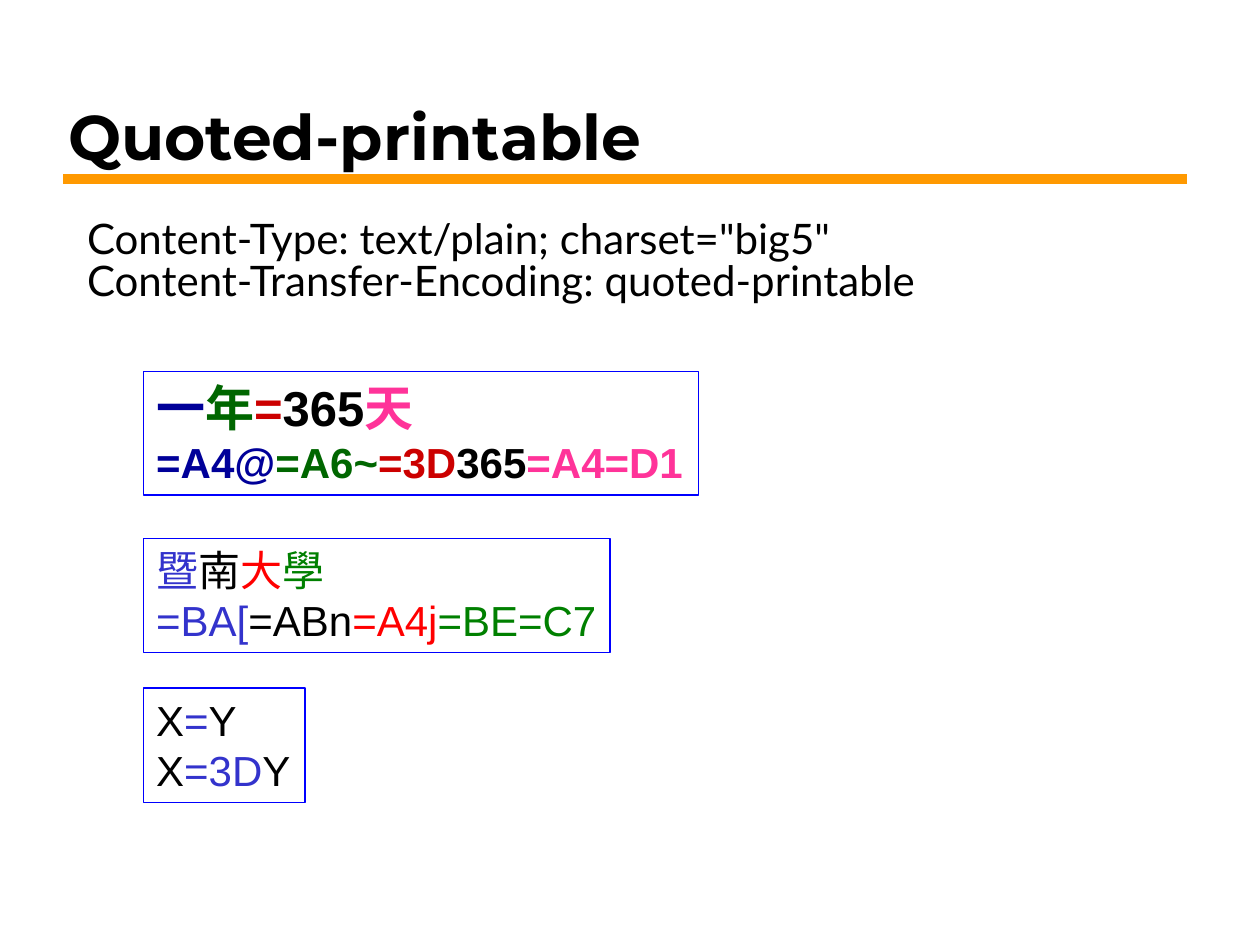
from dataclasses import dataclass

import pptx
import pptx.dml.color
import pptx.enum.shapes
import pptx.enum.text
import pptx.util
from lxml import etree
from pptx.oxml.ns import qn

Cm, Pt = pptx.util.Cm, pptx.util.Pt
RGBColor = pptx.dml.color.RGBColor
PP_ALIGN = pptx.enum.text.PP_ALIGN
MSO_ANCHOR = pptx.enum.text.MSO_ANCHOR
MSO_AUTO_SIZE = pptx.enum.text.MSO_AUTO_SIZE

BLACK = RGBColor(0x00, 0x00, 0x00)
ORANGE = RGBColor(0xFF, 0x99, 0x00)
BORDER_BLUE = RGBColor(0x00, 0x00, 0xFF)
INDIGO = RGBColor(0x33, 0x33, 0xCC)
RED = RGBColor(0xFF, 0x00, 0x00)
GREEN = RGBColor(0x00, 0x80, 0x00)
NAVY = RGBColor(0x00, 0x00, 0x99)
DARK_GREEN = RGBColor(0x00, 0x66, 0x00)
DARK_RED = RGBColor(0xCC, 0x00, 0x00)
PINK = RGBColor(0xFF, 0x33, 0x99)

BOX_LEFT = Cm(2.9)


@dataclass
class Example:
    """Plain text over its encoding; both split into equally coloured parts."""
    top: float
    width: float
    height: float
    colors: list[RGBColor]
    plain: list[str]
    encoded: list[str]
    plain_size: int = 24
    bold: bool = False


EXAMPLES = [
    Example(7.49, 11.18, 2.49, [NAVY, DARK_GREEN, DARK_RED, BLACK, PINK],
            ["一", "年", "=", "365", "天"],
            ["=A4@", "=A6~", "=3D", "365", "=A4=D1"], 28, True),
    Example(10.85, 9.4, 2.31, [INDIGO, BLACK, RED, GREEN],
            ["暨", "南", "大", "學"],
            ["=BA[", "=ABn", "=A4j", "=BE=C7"]),
    Example(13.87, 3.25, 2.31, [BLACK, INDIGO, BLACK],
            ["X", "=", "Y"], ["X", "=3D", "Y"]),
]
HEADERS = [
    ('Content-Type: text/plain; charset="big5"', 0.9),
    ("Content-Transfer-Encoding: quoted-printable", 0.6),
]


def add_run(p, text: str, font: str, size: int, color: RGBColor, bold: bool = False) -> None:
    r = p.add_run()
    r.text = text
    r.font.name = font
    r.font.size = Pt(size)
    r.font.bold = bold
    r.font.color.rgb = color


def place(sp, left: float, top: float, width: float, height: float) -> None:
    sp.left, sp.top, sp.width, sp.height = Cm(left), Cm(top), Cm(width), Cm(height)


def add_title(s) -> None:
    sp = s.shapes.title
    place(sp, 1.12, 0.43, 22.78, 3.18)
    tf = sp.text_frame
    tf.vertical_anchor = MSO_ANCHOR.BOTTOM
    tf.auto_size = MSO_AUTO_SIZE.NONE
    p = tf.paragraphs[0]
    p.alignment = PP_ALIGN.LEFT
    add_run(p, "Quoted-printable", "Montserrat", 36, BLACK, True)


def add_rule(s) -> None:
    sp = s.shapes.add_connector(pptx.enum.shapes.MSO_CONNECTOR.STRAIGHT,
                                Cm(1.27), Cm(3.61), Cm(23.93), Cm(3.61))
    sp.line.color.rgb = ORANGE
    sp.line.width = Pt(6)
    etree.SubElement(sp.element.spPr, qn("a:effectLst"))


def add_headers(s) -> None:
    sp = s.placeholders[1]
    place(sp, 1.5, 4.27, 20.83, 3.43)
    tf = sp.text_frame
    tf.auto_size = MSO_AUTO_SIZE.NONE
    for i, (text, spacing) in enumerate(HEADERS):
        p = tf.add_paragraph() if i else tf.paragraphs[0]
        p.line_spacing = spacing
        pPr = p._p.get_or_add_pPr()
        pPr.set("marL", str(Cm(0.97)))
        pPr.set("indent", str(-Cm(0.97)))
        etree.SubElement(pPr, qn("a:buNone"))
        add_run(p, text, "Lato", 24, BLACK)


def add_example(s, ex: Example) -> None:
    sp = s.shapes.add_shape(pptx.enum.shapes.MSO_SHAPE.RECTANGLE, BOX_LEFT,
                            Cm(ex.top), Cm(ex.width), Cm(ex.height))
    sp.shadow.inherit = False
    sp.fill.background()
    sp.line.color.rgb = BORDER_BLUE
    sp.line.width = Pt(0.75)
    tf = sp.text_frame
    tf.word_wrap = False
    tf.auto_size = MSO_AUTO_SIZE.SHAPE_TO_FIT_TEXT
    tf.vertical_anchor = MSO_ANCHOR.TOP
    rows = [(ex.plain, ex.plain_size), (ex.encoded, 24)]
    for i, (parts, size) in enumerate(rows):
        p = tf.add_paragraph() if i else tf.paragraphs[0]
        p.alignment = PP_ALIGN.LEFT
        for text, color in zip(parts, ex.colors):
            add_run(p, text, "Arial", size, color, ex.bold)


def main() -> None:
    prs = pptx.Presentation()
    prs.slide_width, prs.slide_height = Cm(25.4), Cm(19.05)
    s = prs.slides.add_slide(prs.slide_layouts[1])
    add_title(s)
    add_rule(s)
    add_headers(s)
    for ex in EXAMPLES:
        add_example(s, ex)
    prs.save("out.pptx")


if __name__ == "__main__":
    main()
